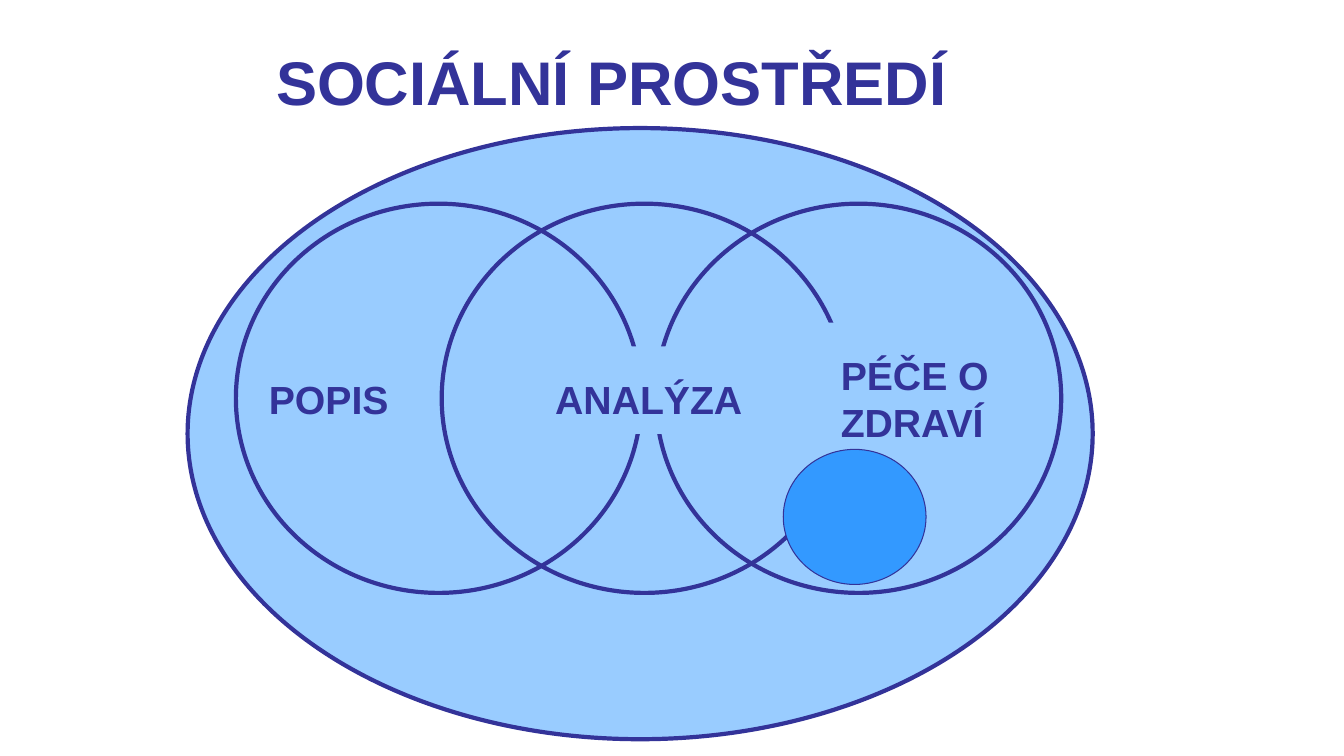
from dataclasses import dataclass

from pptx import Presentation
from pptx.dml.color import RGBColor
from pptx.enum.shapes import MSO_SHAPE
from pptx.enum.text import MSO_ANCHOR, MSO_AUTO_SIZE, PP_ALIGN
from pptx.shapes.autoshape import Shape
from pptx.slide import Slide
from pptx.util import Pt

OVAL, RECT = MSO_SHAPE.OVAL, MSO_SHAPE.RECTANGLE
TOP, LEFT, FIXED = MSO_ANCHOR.TOP, PP_ALIGN.LEFT, MSO_AUTO_SIZE.NONE
NAVY, PALE, BLUE = "333399", "99CCFF", "3399FF"


@dataclass
class Box:
    left: float
    top: float
    width: float
    height: float


@dataclass
class Form:
    kind: MSO_SHAPE
    box: Box
    fill: str = ""
    line: float = 0


@dataclass
class Label:
    text: str
    box: Box


def paint(target, code: str) -> None:
    """Give a fill or a line's fill a solid colour."""
    target.solid()
    target.fore_color.rgb = RGBColor.from_string(code)


def draw(slide: Slide, form: Form) -> None:
    box = form.box
    shape = slide.shapes.add_shape(
        form.kind, Pt(box.left), Pt(box.top), Pt(box.width), Pt(box.height))
    shape.shadow.inherit = False
    if form.fill:
        paint(shape.fill, form.fill)
    else:
        shape.fill.background()
    if form.line:
        paint(shape.line.fill, NAVY)
        shape.line.width = Pt(form.line)
    else:
        shape.line.fill.background()


def write(shape: Shape, text: str, size: float) -> None:
    frame = shape.text_frame
    frame.word_wrap = True
    frame.auto_size = FIXED
    frame.vertical_anchor = TOP
    frame.text = text
    para = frame.paragraphs[0]
    para.alignment = LEFT
    para.font.name = "Arial"
    para.font.size = Pt(size)
    para.font.bold = True
    paint(para.font.fill, NAVY)


def ring(left: float) -> Form:
    return Form(OVAL, Box(left, 145.5, 289.5, 278), line=3)


# Back to front: each patch hides part of the rings drawn before it
FORMS = [
    Form(OVAL, Box(134, 91.5, 646.5, 436.5), PALE, 3),
    ring(315.5),
    Form(RECT, Box(576.5, 230.5, 153.5, 96.5), PALE),
    ring(468.5),
    ring(168.5),
    Form(RECT, Box(384, 247.5, 175.5, 62.5), PALE),
    Form(OVAL, Box(559.5, 321, 102, 96.5), BLUE, 0.75),
]
LABELS = [
    Label("POPIS", Box(185, 264.5, 113, 41)),
    Label("ANALÝZA", Box(389.5, 264.5, 170, 41)),
    Label("PÉČE O ZDRAVÍ", Box(593.5, 247.5, 164, 74)),
]


def main() -> None:
    deck = Presentation()
    deck.slide_width, deck.slide_height = Pt(960), Pt(540)
    slide = deck.slides.add_slide(deck.slide_layouts[5])

    # Title
    title = slide.shapes.title
    title.left, title.top = Pt(190), Pt(28)
    title.width, title.height = Pt(578), Pt(60)
    write(title, "SOCIÁLNÍ PROSTŘEDÍ", 44)

    # Rings and patches
    for form in FORMS:
        draw(slide, form)

    # Ring names
    for label in LABELS:
        box = label.box
        area = slide.shapes.add_textbox(
            Pt(box.left), Pt(box.top), Pt(box.width), Pt(box.height))
        write(area, label.text, 28)

    deck.save("out.pptx")


if __name__ == "__main__":
    main()
